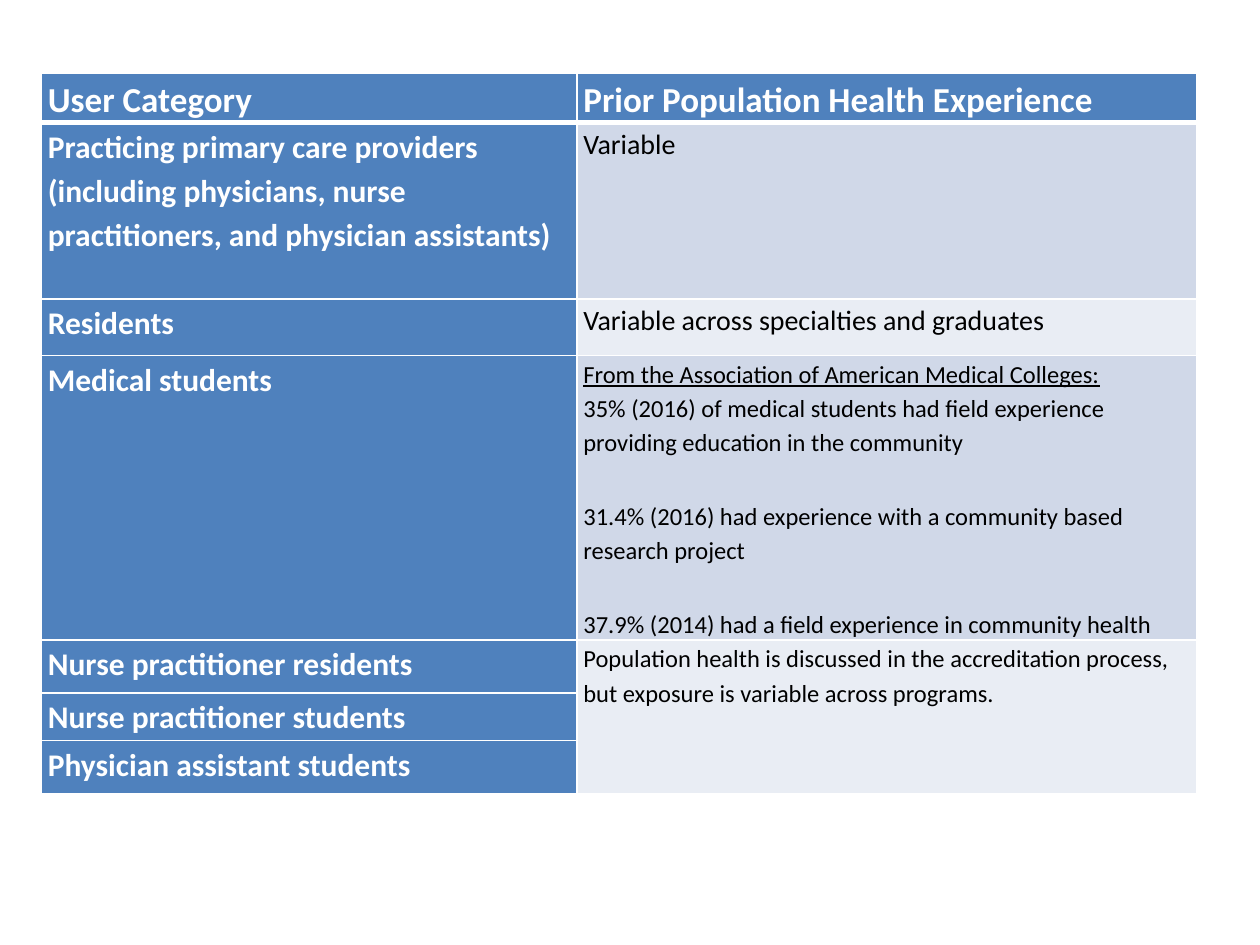
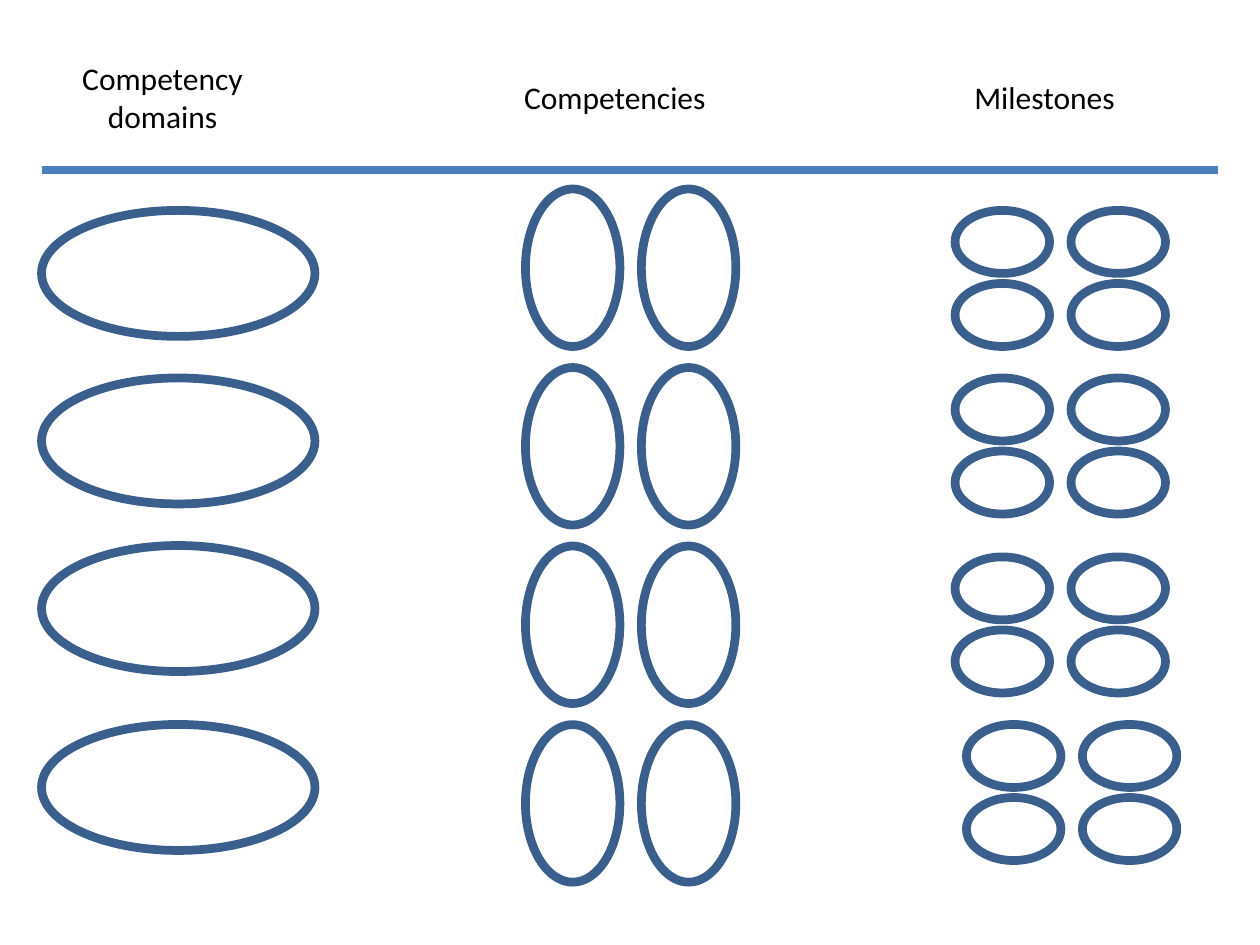
"""Build a table of user categories and a map of competencies."""
from lxml import etree
from pptx import Presentation
from pptx.dml.color import RGBColor
from pptx.enum.shapes import MSO_CONNECTOR, MSO_SHAPE
from pptx.enum.text import MSO_AUTO_SIZE, PP_ALIGN
from pptx.oxml.ns import qn
from pptx.util import Inches, Pt

OVAL, LINE = MSO_SHAPE.OVAL, MSO_CONNECTOR.STRAIGHT
MID, GROW = PP_ALIGN.CENTER, MSO_AUTO_SIZE.SHAPE_TO_FIT_TEXT
FONT, WHITE, BLACK = "Calibri", "FFFFFF", "000000"
BLUE, RULE, RING = "4F81BD", "4B7EBC", "3A5F8C"
BANDS = ("E9EDF4", "D0D8E8")
WIDE, HIGH, EDGE = 10, 7.5, 0.33

HEADS = ("User Category", "Prior Population Health Experience")
USERS = [
    (1.4, ["Practicing primary care providers",
           "(including physicians, nurse practitioners, and physician assistants)"],
     16, ["Variable"]),
    (0.45, ["Residents"], 16, ["Variable across specialties and graduates"]),
    (2.25, ["Medical students"], 14, [
        "From the Association of American Medical Colleges:",
        "35% (2016) of medical students had field experience providing education in the community",
        "31.4% (2016) had experience with a community based research project",
        "37.9% (2014) had a field experience in community health"]),
    (0.42, ["Nurse practitioner residents"], 14, [
        "Population health is discussed in the accreditation process, "
        "but exposure is variable across programs."]),
    (0.38, ["Nurse practitioner students"], 14, []),
    (0.42, ["Physician assistant students"], 14, []),
]
COLS, HEAD_H, TABLE_Y = (4.25, 4.92), 0.39, 0.58
MERGE = (4, 6)
GAP_FROM, GAP = 2, 22.5

LABELS = [("Competency domains", EDGE, 0.42, 0.71),
          ("Competencies", 3.92, 0.57, 0.4),
          ("Milestones", 7.33, 0.57, 0.4)]
DOMAINS = [(EDGE, y) for y in (1.67, 3, 4.33, 5.75)]
SKILLS = [(4.17, 1.5 + 1.417 * i) for i in range(4)]
STONES = [(7.58, 1.67), (7.58, 3), (7.58, 4.42), (7.67, 5.75)]
PITCH = (0.92, 0.58)
GROUPS = [(DOMAINS, 1, 1, (2.17, 1)),
          (SKILLS, 2, 1, (0.75, 1.25)),
          (STONES, 2, 2, (0.75, 0.5))]


def rgb(code):
    """Turn a hex string into a colour."""
    return RGBColor.from_string(code)


def style(par, size, color, bold=False):
    """Set the font of a paragraph."""
    font = par.font
    font.name, font.size, font.bold = FONT, Pt(size), bold
    font.color.rgb = rgb(color)


def edge(cell, low):
    """Give a cell white borders, the bottom one low points wide."""
    props = cell._tc.get_or_add_tcPr()
    for spot, side in enumerate("LRTB"):
        width = Pt(low if side == "B" else 1)
        line = etree.Element(qn(f"a:ln{side}"), w=str(width))
        fill = etree.SubElement(line, qn("a:solidFill"))
        etree.SubElement(fill, qn("a:srgbClr"), val=WHITE)
        props.insert(spot, line)


def fill_cell(cell, lines, size, color, back, bold, low=1):
    """Write lines into a table cell and paint it."""
    cell.margin_left = cell.margin_right = Inches(0.05)
    cell.margin_top = cell.margin_bottom = 0
    cell.fill.solid()
    cell.fill.fore_color.rgb = rgb(back)
    edge(cell, low)
    frame = cell.text_frame
    frame.text = "\n".join(lines)
    for num, par in enumerate(frame.paragraphs):
        par.line_spacing = 1.15
        style(par, size, color, bold)
        if num >= GAP_FROM:
            par.space_before = Pt(GAP)
    if len(lines) > GAP_FROM:
        frame.paragraphs[0].font.underline = True


def add_users(slide):
    """Draw the table of user categories."""
    highs = [HEAD_H] + [row[0] for row in USERS]
    table = slide.shapes.add_table(
        len(highs), len(COLS), Inches(EDGE), Inches(TABLE_Y),
        Inches(sum(COLS)), Inches(sum(highs))).table
    for col, width in zip(table.columns, COLS):
        col.width = Inches(width)
    for row, high in zip(table.rows, highs):
        row.height = Inches(high)
    for num, head in enumerate(HEADS):
        fill_cell(table.cell(0, num), [head], 20, WHITE, BLUE, True, 3)
    for num, (_, who, size, past) in enumerate(USERS, 1):
        band = BANDS[min(num, MERGE[0]) % 2]
        fill_cell(table.cell(num, 0), who, 18, WHITE, BLUE, True)
        fill_cell(table.cell(num, 1), past, size, BLACK, band, False)
    table.cell(MERGE[0], 1).merge(table.cell(MERGE[1], 1))


def add_label(slide, text, x, y, high):
    """Add a centred column label."""
    box = slide.shapes.add_textbox(Inches(x), Inches(y), Inches(1.92), Inches(high))
    frame = box.text_frame
    frame.word_wrap, frame.auto_size = True, GROW
    frame.text = text
    par = frame.paragraphs[0]
    par.alignment = MID
    style(par, 18, BLACK)


def add_ring(slide, x, y, size):
    """Add an open oval."""
    ring = slide.shapes.add_shape(OVAL, *map(Inches, (x, y, *size)))
    ring.shadow.inherit = False
    ring.fill.background()
    ring.line.color.rgb = rgb(RING)
    ring.line.width = Pt(5)


def add_map(slide):
    """Draw the domains, competencies and milestones."""
    rule = slide.shapes.add_connector(
        LINE, *map(Inches, (EDGE, 1.35, WIDE - EDGE, 1.35)))
    rule.line.color.rgb = rgb(RULE)
    rule.line.width = Pt(5)
    etree.SubElement(rule._element.spPr, qn("a:effectLst"))
    for label in LABELS:
        add_label(slide, *label)
    for spots, cols, rows, size in GROUPS:
        for x, y in spots:
            for row in range(rows):
                for col in range(cols):
                    add_ring(slide, x + col * PITCH[0], y + row * PITCH[1], size)


def main():
    """Build and save the deck."""
    deck = Presentation()
    deck.slide_width, deck.slide_height = Inches(WIDE), Inches(HIGH)
    for draw in (add_users, add_map):
        draw(deck.slides.add_slide(deck.slide_layouts[6]))
    deck.save("out.pptx")


if __name__ == "__main__":
    main()
